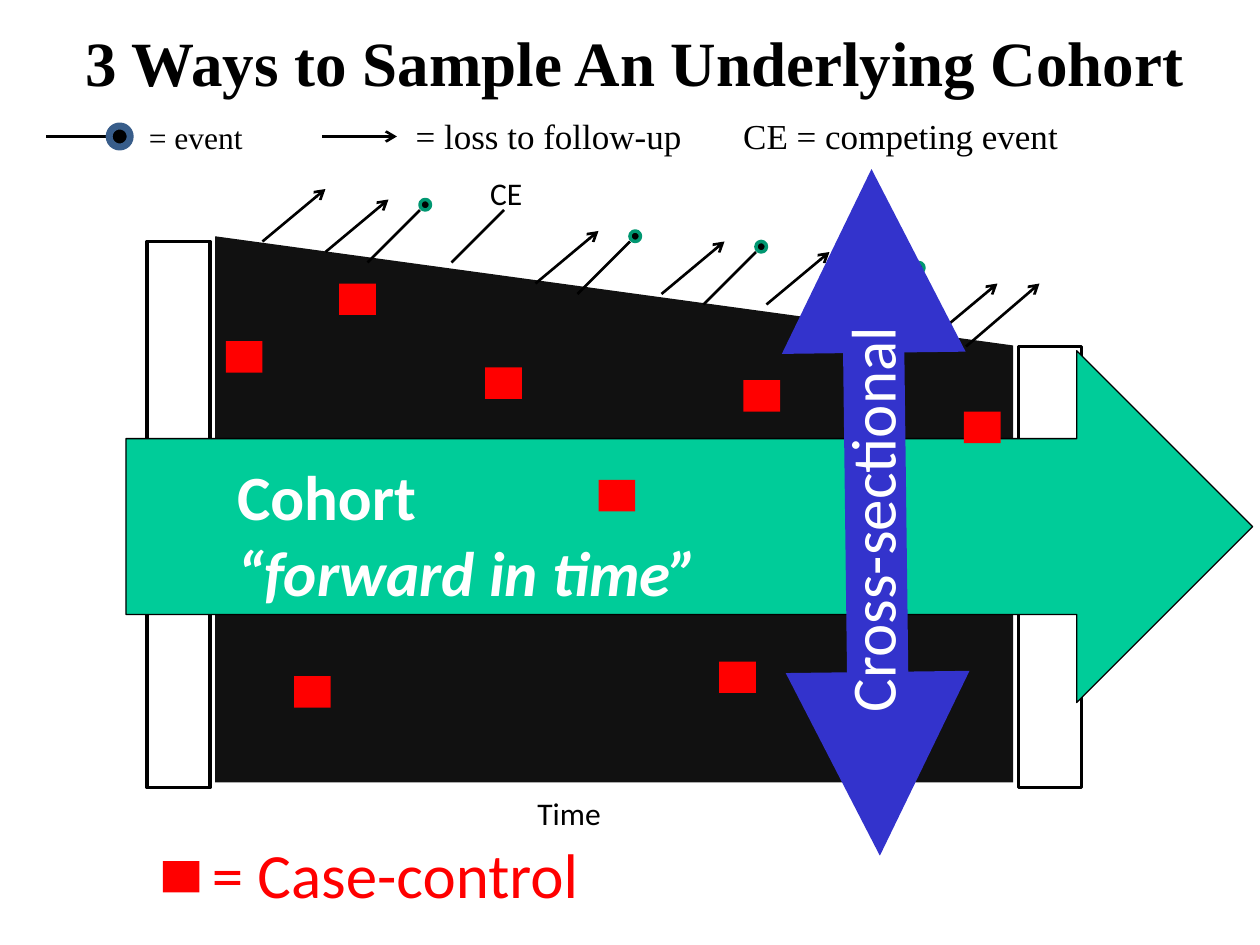
from pptx import Presentation
from pptx.dml.color import RGBColor
from pptx.enum.shapes import MSO_CONNECTOR, MSO_SHAPE as Preset
from pptx.enum.text import MSO_ANCHOR as Anchor, MSO_AUTO_SIZE as AutoSize
from pptx.oxml.ns import qn
from pptx.util import Inches, Pt
from lxml.etree import SubElement

THEME = {
    "ink": "000000", "population": "111111", "event": "009771", "key": "385D8A",
    "cohort": "00CC99", "cross": "3333CC", "case": "FF0000", "light": "FFFFFF",
    "serif": "Times New Roman", "sans": "Calibri",
    "large": 36, "medium": 20, "small": 18,
}

deck = Presentation()
deck.slide_width, deck.slide_height = Inches(10), Inches(7.5)
slide = deck.slides.add_slide(deck.slide_layouts[6])

# The slide is a grid of 120 columns by 90 rows
CELL = deck.slide_width / 120


def draw_shape(preset, box, fill=None, line=None, width=1):
    shape = slide.shapes.add_shape(preset, *(round(n * CELL) for n in box))
    shape.shadow.inherit = False
    if fill:
        shape.fill.solid()
        shape.fill.fore_color.rgb = RGBColor.from_string(THEME[fill])
    else:
        shape.fill.background()
    if line:
        shape.line.color.rgb = RGBColor.from_string(THEME[line])
        shape.line.width = Pt(width)
    else:
        shape.line.fill.background()
    return shape


def draw_line(start, end, width=1.5, color="ink", **arrowheads):
    ends = (round(n * CELL) for n in (*start, *end))
    line = slide.shapes.add_connector(MSO_CONNECTOR.STRAIGHT, *ends)
    line.line.color.rgb = RGBColor.from_string(THEME[color])
    line.line.width = Pt(width)
    properties = line._element.spPr
    for tag, head in arrowheads.items():
        SubElement(properties.find(qn("a:ln")), qn(f"a:{tag}"), type=head)
    SubElement(properties, qn("a:effectLst"))


# Shrinking population between its start and end bars
population = draw_shape(Preset.FLOWCHART_MANUAL_INPUT, (20.5, 22.5, 76, 52), "population")
population._element.spPr.find(qn("a:xfrm")).set("flipH", "1")
for bar in ((97, 33, 6, 42), (14, 23, 6, 52)):
    draw_shape(Preset.RECTANGLE, bar, line="ink", width=2)

# Losses to follow-up
for column, row, run, rise in ((25, 23, 6, 5), (31, 24, 6, 5), (51, 27, 6, 5), (63, 28, 6, 5),
                               (73, 29, 6, 5), (89, 32, 6, 5), (92, 33, 7, 6)):
    draw_line((column, row), (column + run, row - rise), tailEnd="arrow")

# Events end in a dot, competing events do not
for column, row in ((35, 25), (55, 28), (67, 29), (82, 31)):
    draw_line((column, row), (column + 5, row - 5))
    draw_shape(Preset.OVAL, (column + 5, row - 6, 1, 1), "ink", "event", 2)
for column, row in ((43, 25), (78, 30)):
    draw_line((column, row), (column + 5, row - 5))

# Legend marks
draw_line((4.4, 13), (10.4, 13), 2)
draw_shape(Preset.OVAL, (10.4, 12, 2, 2), "ink", "key", 4)
draw_line((30.7, 13), (37.8, 13), tailEnd="arrow")

# Cohort and cross-sectional arrows
draw_shape(Preset.RIGHT_ARROW, (12, 33.4, 107.3, 33.5), "cohort", "ink", 0.75)
draw_line((83, 16.1), (83.8, 81.5), 35, "cross", headEnd="triangle", tailEnd="triangle")

# Case-control samples, the legend square among them
for corner in ((32.3, 27), (46.2, 35), (57, 45.7), (15.5, 82), (28, 64.4),
               (21.5, 32.5), (68.5, 63), (70.8, 36.2), (91.8, 39.2)):
    draw_shape(Preset.RECTANGLE, (*corner, 3.5, 3), "case")

# Labels: box, font, colour, frame format, then paragraphs of (text, size, style) runs
LABELS = (
    ((50, 75, 8.5, 4.8), "sans", "ink", {}, [[("Time", "small", {})]]),
    ((19, 79, 37.7, 8.5), "sans", "case", {}, [[("= Case-control", "large", {})]]),
    ((7, 1.6, 108, 8.5), "serif", "ink", {},
     [[("3 Ways to Sample An Underlying Cohort", "large", {"bold": True})]]),
    ((7, 10.3, 110.8, 5.3), "serif", "ink",
     {"word_wrap": True, "vertical_anchor": Anchor.MIDDLE},
     [[("\t= event", "small", {}),
       ("\t= loss to follow-up\tCE = competing event", "medium", {})]]),
    ((45.5, 16, 5.5, 4.8), "sans", "ink", {}, [[("CE", "small", {})]]),
    ((21.4, 43, 46.8, 15.7), "sans", "light", {},
     [[("Cohort", "large", {"bold": True})],
      [("“forward in time”", "large", {"bold": True, "italic": True})]]),
    ((63.2, 45, 39.5, 8.5), "sans", "light", {}, [[("Cross-sectional", "large", {})]]),
)
LEGEND_STOPS = (6, 31.4, 62.6)

for box, font, color, frame_format, paragraphs in LABELS:
    label = slide.shapes.add_textbox(*(round(n * CELL) for n in box))
    frame = label.text_frame
    for name, value in ({"word_wrap": False, "auto_size": AutoSize.SHAPE_TO_FIT_TEXT}
                        | frame_format).items():
        setattr(frame, name, value)
    for index, runs in enumerate(paragraphs):
        paragraph = frame.add_paragraph() if index else frame.paragraphs[0]
        for words, size, style in runs:
            run = paragraph.add_run()
            run.text = words
            run.font.color.rgb = RGBColor.from_string(THEME[color])
            for name, value in ({"name": THEME[font], "size": Pt(THEME[size])} | style).items():
                setattr(run.font, name, value)
        # Tab stops line the legend wording up with its marks
        if "\t" in paragraph.text:
            stops = SubElement(paragraph._p.get_or_add_pPr(), qn("a:tabLst"))
            for stop in LEGEND_STOPS:
                SubElement(stops, qn("a:tab"), pos=str(round(stop * CELL)), algn="l")

# The last label reads upwards along the cross-sectional arrow
label.rotation = 270

deck.save("out.pptx")
